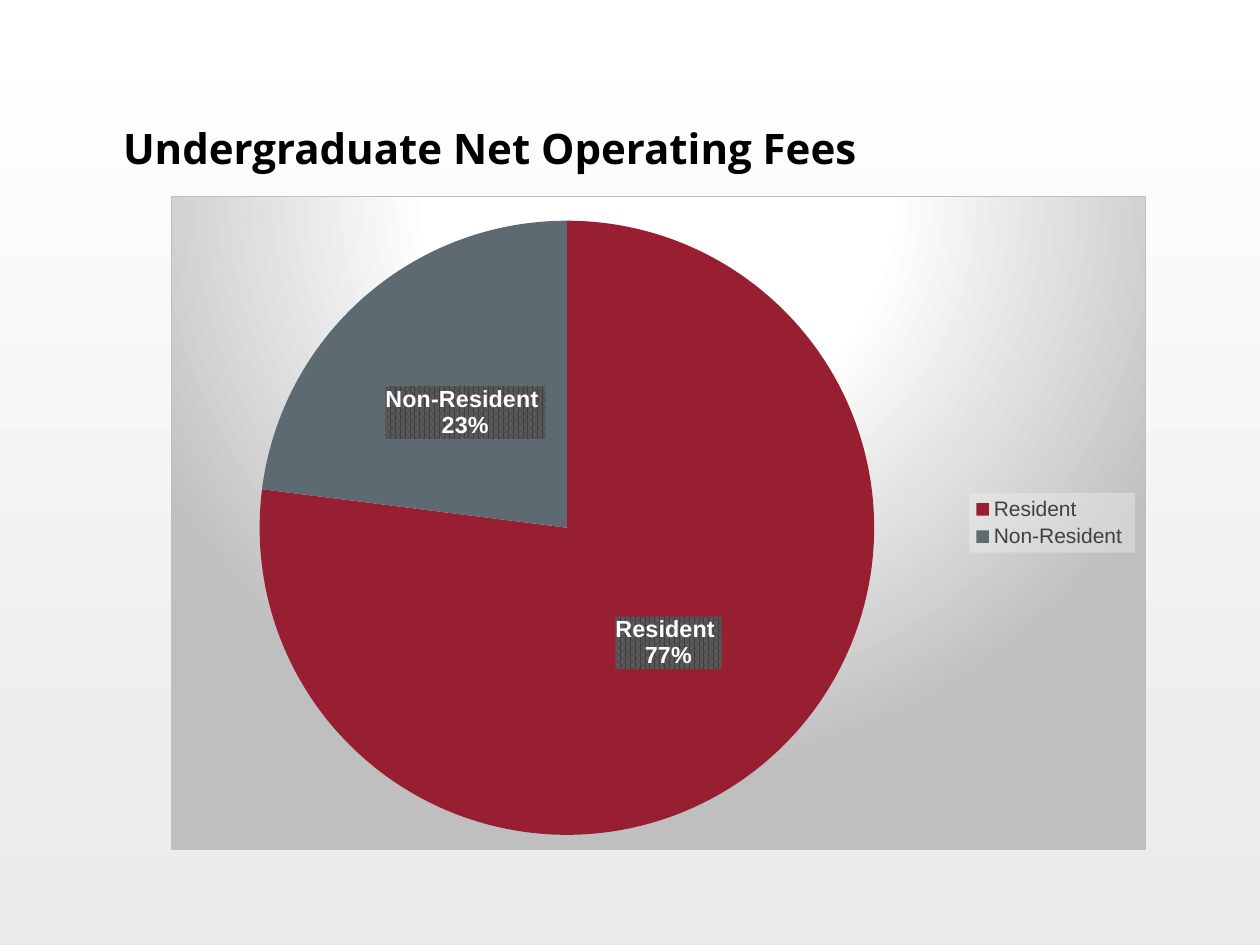
from lxml.etree import SubElement
from pptx import Presentation
from pptx.chart.data import CategoryChartData
from pptx.dml.color import RGBColor
from pptx.enum.chart import XL_CHART_TYPE, XL_LABEL_POSITION, XL_LEGEND_POSITION
from pptx.enum.text import MSO_ANCHOR
from pptx.oxml import parse_xml
from pptx.oxml.ns import nsdecls, qn
from pptx.util import Emu, Pt

PX = 914400 // 126


def px(length):
    return Emu(length * PX)


def color(hex_value):
    return RGBColor.from_string(hex_value)


def solid(hex_value, alpha=100):
    return (f'<a:solidFill><a:srgbClr val="{hex_value}">'
            f'<a:alpha val="{alpha * 1000}"/></a:srgbClr></a:solidFill>')


def pattern(preset, front, back):
    return (f'<a:pattFill prst="{preset}"><a:fgClr><a:srgbClr val="{front}"/></a:fgClr>'
            f'<a:bgClr><a:srgbClr val="{back}"/></a:bgClr></a:pattFill>')


def spotlight(stops):
    """Circular gradient centred above the area it fills."""
    stop_list = "".join(
        f'<a:gs pos="{position * 1000}"><a:srgbClr val="{hex_value}"/></a:gs>'
        for position, hex_value in stops)
    return (f'<a:gradFill><a:gsLst>{stop_list}</a:gsLst><a:path path="circle">'
            '<a:fillToRect l="50000" t="-80000" r="50000" b="180000"/></a:path></a:gradFill>')


def paint(element, fill, line="<a:ln><a:noFill/></a:ln>"):
    """Give a chart part its fill and border, placed ahead of its text properties."""
    properties = parse_xml(f'<c:spPr {nsdecls("c", "a")}>{fill}{line}</c:spPr>')
    element.find(qn("c:txPr")).addprevious(properties)


def set_font(font, name, size, hex_value, bold=False):
    font.name, font.size, font.bold = name, Pt(size), bold
    font.color.rgb = color(hex_value)


class SlideBuilder:
    title_font = "Open Sans"
    chart_font = "Arial"
    white = "FFFFFF"
    border = "BFBFBF"

    def __init__(self, presentation):
        self.slide = presentation.slides.add_slide(presentation.slide_layouts[6])

    def background(self, bottom, top):
        fill = self.slide.background.fill
        fill.gradient()
        fill.gradient_angle = 90
        for stop, hex_value in zip(fill.gradient_stops, (bottom, top)):
            stop.color.rgb = color(hex_value)

    def title(self, text, left, top, width, height):
        frame = self.slide.shapes.add_textbox(
            px(left), px(top), px(width), px(height)).text_frame
        frame.word_wrap = True
        frame.vertical_anchor = MSO_ANCHOR.BOTTOM
        frame.margin_left = frame.margin_right = px(63)
        frame.margin_top, frame.margin_bottom = px(6), px(58)
        paragraph = frame.paragraphs[0]
        paragraph.line_spacing = 0.9
        run = paragraph.add_run()
        run.text = text
        set_font(run.font, self.title_font, 24, "000000", True)

    def pie(self, slices, left, top, width, height):
        """Draw a pie from (category, percent, colour) rows."""
        data = CategoryChartData()
        data.categories = [category for category, _, _ in slices]
        data.add_series("Series 1", [percent for _, percent, _ in slices])
        chart = self.slide.shapes.add_chart(
            XL_CHART_TYPE.PIE, px(left), px(top), px(width), px(height), data).chart
        chart.has_title = False
        set_font(chart.font, self.chart_font, 10, self.white)
        paint(chart.element,
              spotlight([(0, self.white), (39, self.white), (100, self.border)]),
              f'<a:ln w="9525">{solid(self.border)}</a:ln>')
        plot = chart.plots[0]
        plot.vary_by_categories = True
        series = plot.series[0]
        for index, (_, _, hex_value) in enumerate(slices):
            point = series.points[index].format
            point.fill.solid()
            point.fill.fore_color.rgb = color(hex_value)
            point.line.fill.background()
        self.pie_labels(series.data_labels)
        self.legend(chart)
        self.plot_layout(chart, x=0.016, y=0.037, w=0.78, h=0.941)

    def pie_labels(self, labels):
        labels.show_value = False
        labels.show_category_name = labels.show_percentage = True
        labels.number_format, labels.number_format_is_linked = "0%", False
        labels.position = XL_LABEL_POSITION.CENTER
        set_font(labels.font, self.chart_font, 13.3, self.white, True)
        element = labels.font._element.getparent().getparent().getparent().getparent()
        paint(element, pattern("pct75", "404040", "595959"))
        separator = parse_xml(f'<c:separator {nsdecls("c")}>\n</c:separator>')
        flags = [element.find(qn(f"c:{name}")) for name in ("showBubbleSize", "showPercent")]
        next(flag for flag in flags if flag is not None).addnext(separator)

    def legend(self, chart):
        chart.has_legend = True
        legend = chart.legend
        legend.position = XL_LEGEND_POSITION.RIGHT
        legend.include_in_layout = False
        set_font(legend.font, self.chart_font, 12, "404040")
        paint(chart.element.find(f".//{qn('c:legend')}"), solid("F2F2F2", 39))

    def plot_layout(self, chart, **fractions):
        area = chart.element.find(f".//{qn('c:plotArea')}")
        for old_layout in area.findall(qn("c:layout")):
            area.remove(old_layout)
        layout = parse_xml(f'<c:layout {nsdecls("c")}><c:manualLayout/></c:layout>')
        settings = {"layoutTarget": "inner", "xMode": "edge", "yMode": "edge", **fractions}
        for name, value in settings.items():
            SubElement(layout[0], qn(f"c:{name}")).set("val", str(value))
        area.insert(0, layout)


def main():
    presentation = Presentation()
    presentation.slide_width, presentation.slide_height = px(1260), px(945)
    builder = SlideBuilder(presentation)
    builder.background("EAEAEA", "FFFFFF")
    builder.title("Undergraduate Net Operating Fees", 60, 117, 1196, 105)
    builder.pie([("Resident ", 77, "981E32"), ("Non-Resident ", 23, "5E6A71")],
                171, 196, 975, 654)
    presentation.save("out.pptx")


if __name__ == "__main__":
    main()
